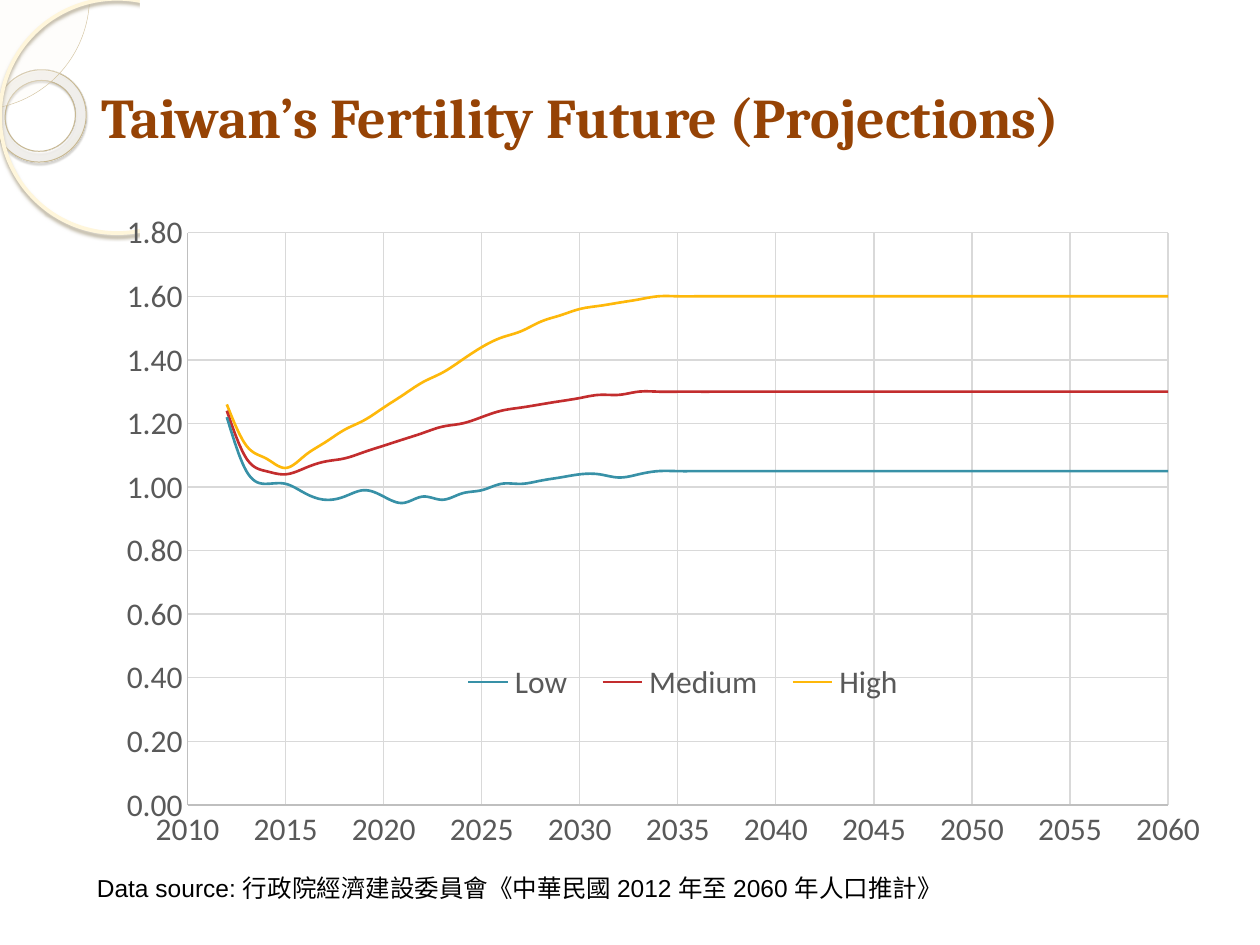
from dataclasses import dataclass
from typing import Optional

import pptx
import pptx.chart.data
import pptx.dml.color
import pptx.enum.chart
import pptx.enum.shapes
import pptx.enum.text
import pptx.oxml
import pptx.oxml.ns
import pptx.util
from pptx.util import Inches

SHAPE = pptx.enum.shapes.MSO_SHAPE
qn = pptx.oxml.ns.qn


@dataclass(frozen=True)
class Theme:
    title: str = "964305"
    body: str = "000000"
    axis_text: str = "595959"
    axis_line: str = "BFBFBF"
    grid: str = "D9D9D9"
    panel: str = "FFFFFF"
    title_font: str = "Cambria"
    body_font: str = "Arial"
    chart_font: str = "Calibri"
    title_size: int = 32
    body_size: int = 14
    chart_size: int = 18


THEME = Theme()


@dataclass(frozen=True)
class Shadow:
    color: str
    opacity: int
    blur: float
    distance: float
    angle: int


@dataclass(frozen=True)
class Ornament:
    kind: SHAPE
    box: tuple[float, float, float, float]
    fill: Optional[str] = None
    opacity: int = 100
    line: Optional[str] = None
    line_width: float = 0
    adjustments: tuple[float, ...] = ()
    rotation: float = 0
    shadow: Optional[Shadow] = None
    gradient: tuple[tuple[int, str, int], ...] = ()


@dataclass(frozen=True)
class Caption:
    text: str
    box: tuple[float, float, float, float]
    font: str
    size: int
    color: str
    bold: bool = False
    anchor: pptx.enum.text.MSO_ANCHOR = pptx.enum.text.MSO_ANCHOR.TOP
    auto_size: pptx.enum.text.MSO_AUTO_SIZE = pptx.enum.text.MSO_AUTO_SIZE.NONE


@dataclass(frozen=True)
class Projection:
    name: str
    color: str
    rates: tuple[float, ...]  # from 2012 until the rate settles


ORNAMENTS = (
    Ornament(SHAPE.DONUT, (-0.04, 0.55, 0.72, 0.74), line="C7B893", line_width=0.58,
             adjustments=(0.118,), rotation=38.6, shadow=Shadow("5A5444", 35, 1, 1.2, 75),
             gradient=((0, "FFFCF6", 70), (70, "FFFEFB", 55), (100, "F0D28E", 60))),
    Ornament(SHAPE.PIE, (-1.08, -0.92, 1.79, 1.79), "FEFAF4", 33, "D3C39F", 0.25,
             adjustments=(0, 54.02)),
    Ornament(SHAPE.OVAL, (0, -0.01, 1.86, 1.86), line="FFF6DB", line_width=2.15,
             shadow=Shadow("AFA58D", 85, 2, 2, 90)),
    Ornament(SHAPE.RECTANGLE, (1.11, 0, 8.89, 7.5), THEME.panel),
)
CAPTIONS = (
    Caption("Taiwan’s Fertility Future (Projections)", (0.71, 0.3, 9.06, 1.25),
            THEME.title_font, THEME.title_size, THEME.title, True,
            pptx.enum.text.MSO_ANCHOR.MIDDLE),
    Caption("Data source: 行政院經濟建設委員會《中華民國 2012 年至 2060 年人口推計》",
            (0.67, 6.88, 6.92, 0.34), THEME.body_font, THEME.body_size, THEME.body,
            auto_size=pptx.enum.text.MSO_AUTO_SIZE.SHAPE_TO_FIT_TEXT),
)
YEARS = range(2012, 2061)
PROJECTIONS = (
    Projection("Low", "3891A7", (
        1.22, 1.05, 1.01, 1.01, 0.98, 0.96, 0.97, 0.99, 0.97, 0.95, 0.97, 0.96,
        0.98, 0.99, 1.01, 1.01, 1.02, 1.03, 1.04, 1.04, 1.03, 1.04, 1.05)),
    Projection("Medium", "C32D2E", (
        1.24, 1.09, 1.05, 1.04, 1.06, 1.08, 1.09, 1.11, 1.13, 1.15, 1.17, 1.19,
        1.2, 1.22, 1.24, 1.25, 1.26, 1.27, 1.28, 1.29, 1.29, 1.3)),
    Projection("High", "FEB80A", (
        1.26, 1.13, 1.09, 1.06, 1.1, 1.14, 1.18, 1.21, 1.25, 1.29, 1.33, 1.36,
        1.4, 1.44, 1.47, 1.49, 1.52, 1.54, 1.56, 1.57, 1.58, 1.59, 1.6)),
)


def rgb(color: str) -> pptx.dml.color.RGBColor:
    return pptx.dml.color.RGBColor.from_string(color)


def add_element(parent, tag: str, **attributes):
    element = parent.makeelement(qn(tag), {key: str(value) for key, value in attributes.items()})
    parent.append(element)
    return element


def add_color(parent, color: str, opacity: int) -> None:
    add_element(add_element(parent, "a:srgbClr", val=color), "a:alpha", val=opacity * 1000)


def fill_radially(shape, stops: tuple[tuple[int, str, int], ...]) -> None:
    shape.fill.gradient()
    gradient = shape._element.spPr.find(qn("a:gradFill"))
    for child in list(gradient):
        gradient.remove(child)
    stop_list = add_element(gradient, "a:gsLst")
    for position, color, opacity in stops:
        add_color(add_element(stop_list, "a:gs", pos=position * 1000), color, opacity)
    focus = add_element(gradient, "a:path", path="circle")
    add_element(focus, "a:fillToRect", l=-408000, t=-50000, r=508000, b=150000)


def add_ornament(slide, ornament: Ornament) -> None:
    shape = slide.shapes.add_shape(ornament.kind, *map(Inches, ornament.box))
    shape.rotation = ornament.rotation
    for index, value in enumerate(ornament.adjustments):
        shape.adjustments[index] = value
    if ornament.gradient:
        fill_radially(shape, ornament.gradient)
    elif ornament.fill:
        shape.fill.solid()
        shape.fill.fore_color.rgb = rgb(ornament.fill)
        color = shape._element.spPr.find(qn("a:solidFill"))[0]
        add_element(color, "a:alpha", val=ornament.opacity * 1000)
    else:
        shape.fill.background()
    if ornament.line:
        style_line(shape.line, ornament.line, ornament.line_width)
    else:
        shape.line.fill.background()
    shape.shadow.inherit = False
    if ornament.shadow:
        shadow = ornament.shadow
        effects = shape._element.spPr.find(qn("a:effectLst"))
        outer = add_element(effects, "a:outerShdw", blurRad=pptx.util.Pt(shadow.blur),
                            dist=pptx.util.Pt(shadow.distance), dir=shadow.angle * 60000,
                            algn="tl", rotWithShape=0)
        add_color(outer, shadow.color, shadow.opacity)


def add_caption(slide, caption: Caption) -> None:
    frame = slide.shapes.add_textbox(*map(Inches, caption.box)).text_frame
    frame.word_wrap = True
    frame.auto_size = caption.auto_size
    frame.vertical_anchor = caption.anchor
    run = frame.paragraphs[0].add_run()
    run.text = caption.text
    run.font.bold = caption.bold
    style_font(run.font, caption.font, caption.size, caption.color)


def style_font(font, name: str, size: int, color: str) -> None:
    font.name, font.size = name, pptx.util.Pt(size)
    font.color.rgb = rgb(color)


def style_line(line, color: str, width: float) -> None:
    line.color.rgb = rgb(color)
    line.width = pptx.util.Pt(width)


def style_axis(axis, low: float, high: float, step: float, number_format: str) -> None:
    axis.minimum_scale, axis.maximum_scale, axis.major_unit = low, high, step
    axis.major_tick_mark = axis.minor_tick_mark = pptx.enum.chart.XL_TICK_MARK.NONE
    axis.has_major_gridlines = True
    style_line(axis.major_gridlines.format.line, THEME.grid, 0.75)
    style_line(axis.format.line, THEME.axis_line, 0.75)
    style_font(axis.tick_labels.font, THEME.chart_font, THEME.chart_size, THEME.axis_text)
    axis.tick_labels.number_format = number_format
    axis.tick_labels.number_format_is_linked = False


def place_manually(parent, index: int, box: tuple[float, ...], inner: bool = False) -> None:
    """Give a chart part a place in fractions of the chart's size."""
    for old in parent.findall(qn("c:layout")):
        parent.remove(old)
    layout = parent.makeelement(qn("c:layout"), {})
    parent.insert(index, layout)
    manual = add_element(layout, "c:manualLayout")
    if inner:
        add_element(manual, "c:layoutTarget", val="inner")
    for mode in ("xMode", "yMode"):
        add_element(manual, f"c:{mode}", val="edge")
    for key, value in zip("xywh", box):
        add_element(manual, f"c:{key}", val=value)


def add_projection_chart(slide) -> None:
    data = pptx.chart.data.XyChartData(number_format="0.00")
    for projection in PROJECTIONS:
        series = data.add_series(projection.name)
        for index, year in enumerate(YEARS):
            series.add_data_point(year, projection.rates[min(index, len(projection.rates) - 1)])
    chart = slide.shapes.add_chart(
        pptx.enum.chart.XL_CHART_TYPE.XY_SCATTER_SMOOTH_NO_MARKERS,
        *map(Inches, (0.71, 1.58, 9.06, 5.25)), data).chart
    chart.has_title = False
    style_font(chart.font, THEME.chart_font, THEME.chart_size, THEME.body)
    chart.plots[0].vary_by_categories = False
    for series, projection in zip(chart.plots[0].series, PROJECTIONS):
        style_line(series.format.line, projection.color, 1.5)
        series.marker.style = pptx.enum.chart.XL_MARKER_STYLE.NONE
        series._element.get_or_add_smooth().val = True
    style_axis(chart.category_axis, 2010, 2060, 5, "0")
    style_axis(chart.value_axis, 0, 1.8, 0.2, "0.00")
    chart.has_legend = True
    chart.legend.position = pptx.enum.chart.XL_LEGEND_POSITION.BOTTOM
    chart.legend.include_in_layout = False
    style_font(chart.legend.font, THEME.chart_font, THEME.chart_size, THEME.axis_text)
    place_manually(chart.legend._element, 1, (0.31, 0.69, 0.42, 0.08))
    plot_area = chart._chartSpace.chart.plotArea
    place_manually(plot_area, 0, (0.086, 0.051, 0.859, 0.865), inner=True)


def main() -> None:
    presentation = pptx.Presentation()
    presentation.slide_width, presentation.slide_height = Inches(10), Inches(7.5)
    slide = presentation.slides.add_slide(presentation.slide_layouts[6])
    for ornament in ORNAMENTS:
        add_ornament(slide, ornament)
    for caption in CAPTIONS:
        add_caption(slide, caption)
    add_projection_chart(slide)
    presentation.save("out.pptx")


if __name__ == "__main__":
    main()
